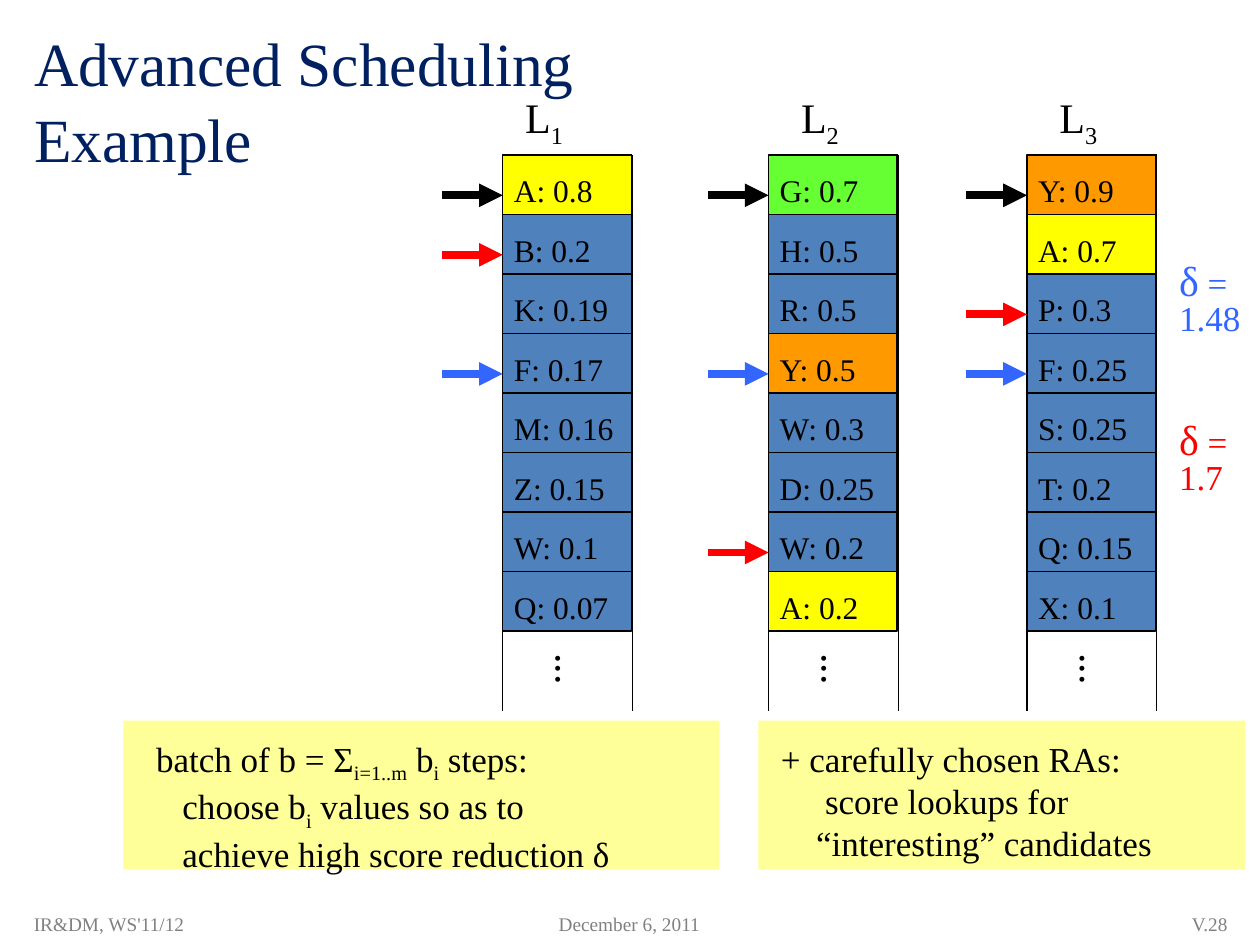
from dataclasses import dataclass

from lxml import etree
from pptx import Presentation
from pptx.dml.color import RGBColor
from pptx.enum.shapes import MSO_CONNECTOR, MSO_SHAPE
from pptx.enum.text import MSO_ANCHOR, PP_ALIGN
from pptx.oxml.ns import qn
from pptx.util import Inches, Pt

STRAIGHT = MSO_CONNECTOR.STRAIGHT
RECTANGLE = MSO_SHAPE.RECTANGLE
TOP, MIDDLE = MSO_ANCHOR.TOP, MSO_ANCHOR.MIDDLE
LEFT, CENTER, RIGHT = PP_ALIGN.LEFT, PP_ALIGN.CENTER, PP_ALIGN.RIGHT

BLACK = RGBColor(0x00, 0x00, 0x00)
NAVY = RGBColor(0x00, 0x20, 0x60)
GRAY = RGBColor(0x80, 0x80, 0x80)
STEEL = RGBColor(0x4F, 0x81, 0xBD)
YELLOW = RGBColor(0xFF, 0xFF, 0x00)
GREEN = RGBColor(0x66, 0xFF, 0x33)
ORANGE = RGBColor(0xFF, 0x99, 0x00)
PALE = RGBColor(0xFF, 0xFF, 0x99)
BLUE = RGBColor(0x33, 0x66, 0xFF)
RED = RGBColor(0xFF, 0x00, 0x00)

FACE = "Times New Roman"
WIDTH, HEIGHT = 10, 7.5
GRID_TOP, ROW, CELL_WIDTH = 1.23, 0.4725, 1.02
RAIL_BOTTOM, RAIL_GAP = 5.64, 1.03
ARROW_LENGTH, ARROW_DROP = 0.48, 0.32
FOOTER_TOP, FOOTER_HEIGHT = 7.17, 0.33
HIGHLIGHTS = {"A": YELLOW, "G": GREEN, "Y": ORANGE}


@dataclass(frozen=True)
class Piece:
    text: str
    size: float
    subscript: bool = False


@dataclass(frozen=True)
class Line:
    pieces: tuple[Piece, ...]
    indent: float = 0


@dataclass(frozen=True)
class RankedList:
    left: float
    index: str
    label_shift: float
    entries: tuple[str, ...]


@dataclass(frozen=True)
class Schedule:
    color: RGBColor
    rows: tuple[int, int, int]


@dataclass(frozen=True)
class Note:
    left: float
    width: float
    text_left: float
    text_width: float
    lines: tuple[Line, ...]


def plain(text: str, size: float, indent: float = 0) -> Line:
    return Line((Piece(text, size),), indent)


def fill_text(frame, lines: tuple[Line, ...], color: RGBColor, **paragraph_format) -> None:
    for number, line in enumerate(lines):
        paragraph = frame.paragraphs[0] if number == 0 else frame.add_paragraph()
        if line.indent:
            properties = paragraph._p.get_or_add_pPr()
            properties.set("marL", str(Inches(line.indent)))
            properties.set("indent", "0")
        for name, value in paragraph_format.items():
            setattr(paragraph, name, value)
        for piece in line.pieces:
            run = paragraph.add_run()
            run.text = piece.text
            for name, value in {"name": FACE, "size": Pt(piece.size)}.items():
                setattr(run.font, name, value)
            run.font.color.rgb = color
            if piece.subscript:
                run._r.get_or_add_rPr().set("baseline", "-25000")


def add_text(slide, left: float, top: float, width: float, height: float,
             lines: tuple[Line, ...], color: RGBColor = BLACK,
             anchor=TOP, **paragraph_format):
    box = slide.shapes.add_textbox(*map(Inches, (left, top, width, height)))
    box.text_frame.word_wrap = True
    box.text_frame.vertical_anchor = anchor
    fill_text(box.text_frame, lines, color, **paragraph_format)
    return box


def add_line(slide, start: tuple[float, float], end: tuple[float, float],
             color: RGBColor = BLACK, weight: float = 0.75, arrow: bool = False) -> None:
    line = slide.shapes.add_connector(STRAIGHT, *map(Inches, (*start, *end)))
    line.line.color.rgb = color
    line.line.width = Pt(weight)
    if arrow:
        etree.SubElement(line.line._get_or_add_ln(), qn("a:tailEnd"), type="triangle")
    etree.SubElement(line._element.spPr, qn("a:effectLst"))


def add_block(slide, left: float, top: float, width: float, height: float,
              fill: RGBColor, outlined: bool) -> None:
    block = slide.shapes.add_shape(RECTANGLE, *map(Inches, (left, top, width, height)))
    block.shadow.inherit = False
    block.fill.solid()
    block.fill.fore_color.rgb = fill
    if outlined:
        block.line.color.rgb = BLACK
        block.line.width = Pt(0.75)
    else:
        block.line.fill.background()


def draw_list(slide, ranked: RankedList) -> None:
    left, right = ranked.left, ranked.left + RAIL_GAP
    add_line(slide, (left, GRID_TOP), (right, GRID_TOP))
    for rail in (left, right):
        add_line(slide, (rail, GRID_TOP), (rail, RAIL_BOTTOM))
    label = Line((Piece("L", 24), Piece(ranked.index, 24, True)))
    add_text(slide, left + ranked.label_shift, 0.68, 0.56, 0.5, (label,))
    for row, entry in enumerate(ranked.entries):
        top = GRID_TOP + row * ROW
        add_block(slide, left, top, CELL_WIDTH, ROW, HIGHLIGHTS.get(entry[0], STEEL), True)
        add_text(slide, left - 0.01, top + 0.08, 1.06, 0.4, (plain(entry, 18),))
    ellipsis = add_text(slide, left + 0.32, 5.07, 0.47, 0.5, (plain("...", 24),))
    ellipsis.rotation = 90


def draw_schedule(slide, schedule: Schedule) -> None:
    for ranked, row in zip(LISTS, schedule.rows):
        level = GRID_TOP + row * ROW + ARROW_DROP
        add_line(slide, (ranked.left - ARROW_LENGTH, level), (ranked.left, level),
                 schedule.color, 4.5, True)


def draw_delta(slide, top: float, value: str, color: RGBColor) -> None:
    lines = (Line((Piece("δ", 24), Piece(" =", 20))), plain(value, 20))
    add_text(slide, 9.26, top, 0.74, 0.69, lines, color, line_spacing=0.8)


def draw_note(slide, note: Note) -> None:
    add_block(slide, note.left, 5.72, note.width, 1.18, PALE, False)
    add_text(slide, note.text_left, 5.8, note.text_width, 1.11, note.lines)


LISTS = (
    RankedList(3.99, "1", 0.08, ("A: 0.8", "B: 0.2", "K: 0.19", "F: 0.17",
                                 "M: 0.16", "Z: 0.15", "W: 0.1", "Q: 0.07")),
    RankedList(6.1, "2", 0.16, ("G: 0.7", "H: 0.5", "R: 0.5", "Y: 0.5",
                                "W: 0.3", "D: 0.25", "W: 0.2", "A: 0.2")),
    RankedList(8.15, "3", 0.16, ("Y: 0.9", "A: 0.7", "P: 0.3", "F: 0.25",
                                 "S: 0.25", "T: 0.2", "Q: 0.15", "X: 0.1")),
)
SCHEDULES = (Schedule(BLACK, (0, 0, 0)), Schedule(BLUE, (3, 3, 3)), Schedule(RED, (1, 6, 2)))
DELTAS = ((2.05, "1.48", BLUE), (3.31, "1.7", RED))
NOTES = (
    Note(0.98, 4.73, 1.14, 4.2, (
        Line((Piece("batch of b = Σ", 20), Piece("i=1..m", 20, True), Piece(" b", 20),
              Piece("i", 20, True), Piece(" steps:", 20))),
        Line((Piece("choose b", 20), Piece("i", 20, True),
              Piece(" values so as to", 20)), 0.21),
        plain("achieve high score reduction δ", 20, 0.21))),
    Note(6.02, 3.86, 6.1, 3.5, (
        plain("+ carefully chosen RAs:", 20),
        plain("score lookups for", 20, 0.35),
        plain("“interesting” candidates", 20, 0.28))),
)
FOOTERS = ((0.17, 3, "IR&DM, WS'11/12", LEFT),
           (3.83, 2.33, "December 6, 2011", CENTER),
           (7.67, 2.17, "V.28", RIGHT))


def main() -> None:
    deck = Presentation()
    deck.slide_width, deck.slide_height = Inches(WIDTH), Inches(HEIGHT)
    slide = deck.slides.add_slide(deck.slide_layouts[5])

    title = slide.shapes.title
    placement = {"left": 0.17, "top": 0.08, "width": 9.67, "height": 1.46}
    for name, value in placement.items():
        setattr(title, name, Inches(value))
    frame_format = {"vertical_anchor": TOP, "word_wrap": True, "margin_top": Inches(0.12)}
    for name, value in frame_format.items():
        setattr(title.text_frame, name, value)
    fill_text(title.text_frame, (plain("Advanced Scheduling", 35.1), plain("Example", 35.1)),
              NAVY, alignment=LEFT)
    title.text_frame.paragraphs[1].space_before = Pt(1.5)

    for ranked in LISTS:
        draw_list(slide, ranked)
    for schedule in SCHEDULES:
        draw_schedule(slide, schedule)
    for top, value, color in DELTAS:
        draw_delta(slide, top, value, color)
    for note in NOTES:
        draw_note(slide, note)
    for left, width, text, alignment in FOOTERS:
        add_text(slide, left, FOOTER_TOP, width, FOOTER_HEIGHT, (plain(text, 11),),
                 GRAY, MIDDLE, alignment=alignment)
    deck.save("out.pptx")


if __name__ == "__main__":
    main()
